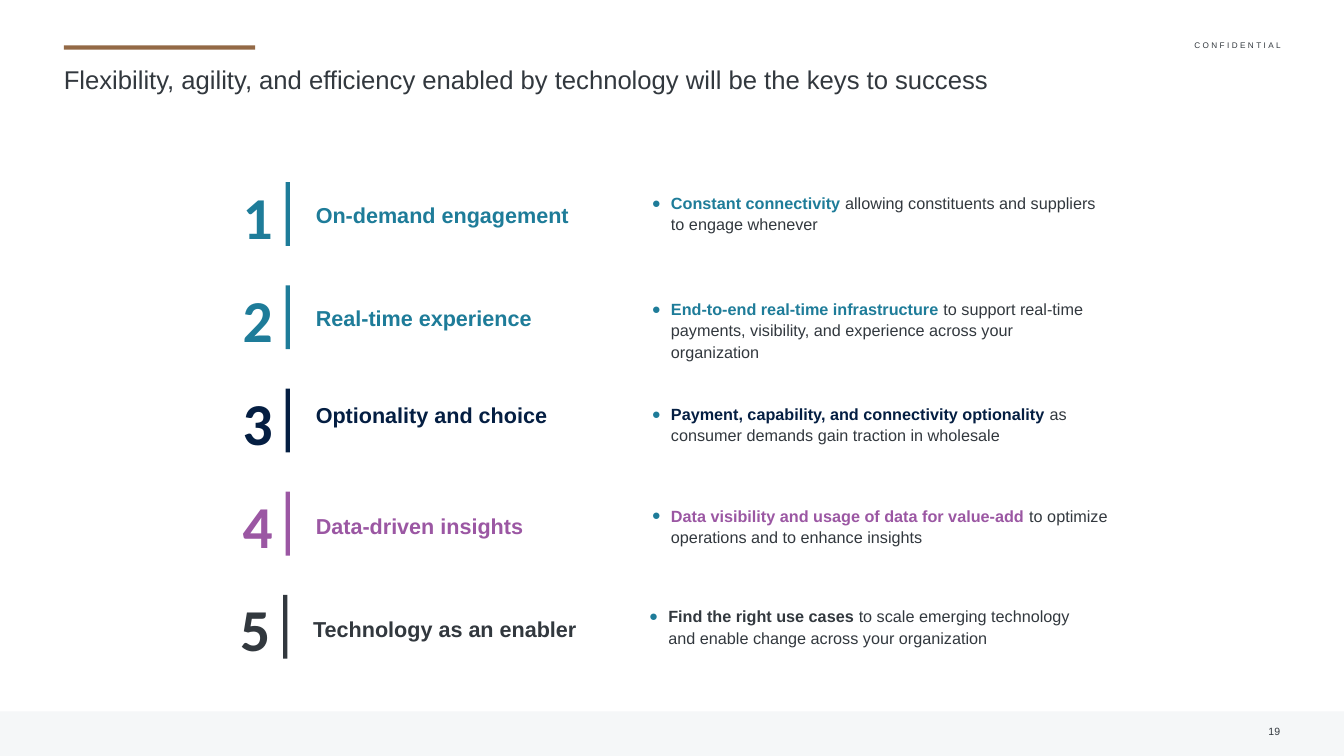
from lxml import etree
from pptx import Presentation
from pptx.dml.color import RGBColor
from pptx.enum.shapes import MSO_SHAPE
from pptx.enum.text import MSO_ANCHOR, PP_ALIGN
from pptx.oxml.ns import qn
from pptx.util import Cm, Pt

RECT = MSO_SHAPE.RECTANGLE
TOP, MIDDLE = MSO_ANCHOR.TOP, MSO_ANCHOR.MIDDLE
LEFT, CENTER, RIGHT = PP_ALIGN.LEFT, PP_ALIGN.CENTER, PP_ALIGN.RIGHT

COLORS = {
    "text": "32383E",
    "teal": "1E7C99",
    "navy": "041E42",
    "purple": "9B57A3",
    "bronze": "936946",
    "footer": "F5F7F8",
}

ROW_TOP, ROW_PITCH = 5.03, 3.12
ROWS = [
    ("teal", "On-demand engagement", 5.94, 5.69, 0,
     "Constant connectivity ",
     "allowing constituents and suppliers to engage whenever"),
    ("teal", "Real-time experience", 9.04, 8.89, 0,
     "End-to-end real-time infrastructure ",
     "to support real-time payments, visibility, and experience across your organization"),
    ("navy", "Optionality and choice", 11.99, 12.07, 0,
     "Payment, capability, and connectivity optionality ",
     "as consumer demands gain traction in wholesale"),
    ("purple", "Data-driven insights", 15.32, 15.14, 0,
     "Data visibility and usage of data for value-add ",
     "to optimize operations and to enhance insights"),
    ("text", "Technology as an enabler", 18.44, 18.19, -0.08,
     "Find the right use cases ",
     "to scale emerging technology and enable change across your organization"),
]


class SlideBuilder:
    def __init__(self, s, font="Arial"):
        self.s = s
        self.shapes = s.shapes
        self.font = font

    def group(self):
        self.shapes = self.s.shapes.add_group_shape().shapes

    def bar(self, x, y, w, h, color):
        sp = self.shapes.add_shape(RECT, Cm(x), Cm(y), Cm(w), Cm(h))
        sp.shadow.inherit = False
        sp.fill.solid()
        sp.fill.fore_color.rgb = RGBColor.from_string(COLORS[color])
        sp.line.fill.background()

    def text(self, x, y, w, h, runs, size, font=None, align=LEFT, anchor=TOP,
             spacing=1.1, inset=(0, 0), after=0):
        sp = self.shapes.add_textbox(Cm(x), Cm(y), Cm(w), Cm(h))
        tf = sp.text_frame
        side, edge = map(Cm, inset)
        frame_format = {
            "word_wrap": True, "vertical_anchor": anchor,
            "margin_left": side, "margin_right": side,
            "margin_top": edge, "margin_bottom": edge,
        }
        for name, value in frame_format.items():
            setattr(tf, name, value)
        p = tf.paragraphs[0]
        paragraph_format = {
            "alignment": align, "line_spacing": spacing, "space_after": Pt(after),
        }
        for name, value in paragraph_format.items():
            setattr(p, name, value)
        for words, color, bold in runs:
            r = p.add_run()
            r.text = words
            run_format = {"name": font or self.font, "size": Pt(size), "bold": bold}
            for name, value in run_format.items():
                setattr(r.font, name, value)
            r.font.color.rgb = RGBColor.from_string(COLORS[color])
        return p

    def tracked_text(self, *args, tracking, **kwargs):
        p = self.text(*args, **kwargs)
        for r in p.runs:
            r.font._element.set("spc", str(tracking))

    def bullet(self, *args, color, **kwargs):
        pPr = self.text(*args, **kwargs)._p.get_or_add_pPr()
        indent = Cm(0.58)
        pPr.set("marL", str(indent))
        pPr.set("indent", str(-indent))
        bullet_color = etree.SubElement(pPr, qn("a:buClr"))
        etree.SubElement(bullet_color, qn("a:srgbClr"), val=COLORS[color])
        etree.SubElement(pPr, qn("a:buSzPct"), val="92000")
        etree.SubElement(pPr, qn("a:buFont"), typeface=self.font)
        etree.SubElement(pPr, qn("a:buChar"), char="●")


def main():
    prs = Presentation()
    prs.slide_width, prs.slide_height = Cm(40.64), Cm(22.86)
    b = SlideBuilder(prs.slides.add_slide(prs.slide_layouts[6]))

    b.bar(1.93, 1.37, 5.79, 0.13, "bronze")
    b.tracked_text(9.73, 1.19, 29, 0.64, [("CONFIDENTIAL", "text", False)], 7,
                   align=RIGHT, tracking=210)
    b.bar(0, 21.51, 40.64, 1.35, "footer")
    b.text(1.93, 1.83, 36.8, 2, [(
        "Flexibility, agility, and efficiency enabled by technology "
        "will be the keys to success", "text", False)], 22)
    b.text(37.16, 21.92, 1.55, 0.38, [("19", "text", False)], 9,
           align=RIGHT, anchor=MIDDLE)

    for i, (color, heading, heading_y, detail_y, dx, lead, rest) in enumerate(ROWS):
        y = ROW_TOP + i * ROW_PITCH
        b.group()
        b.text(7.01 + dx, y, 1.57, 2.44, [(str(i + 1), color, True)], 50.9,
               font="Calibri", align=CENTER, spacing=1.15,
               inset=(0.18, 0.08), after=6.8)
        b.bar(8.64 + dx, y + 0.48, 0.13, 1.93, color)
        b.text(9.35 + dx, heading_y, 9.96, 0.99, [(heading, color, True)], 18.5,
               inset=(0.2, 0.1))
        b.bullet(19.51 + dx, detail_y, 14.3 if color == "purple" else 14.02, 1.45,
                 [(lead, color, True), (rest, "text", False)], 13.9,
                 inset=(0.2, 0.1), color="teal")

    prs.save("out.pptx")


if __name__ == "__main__":
    main()
